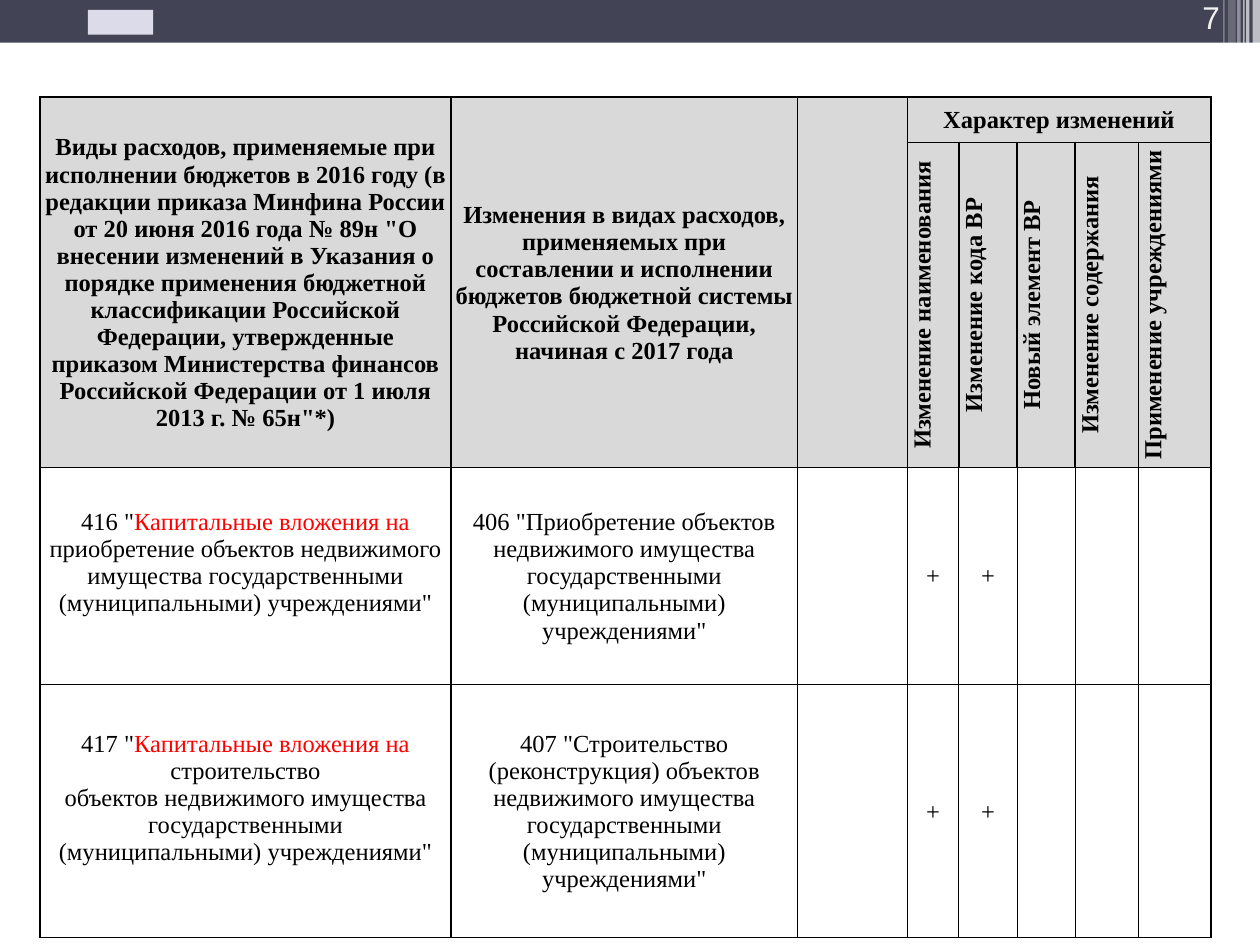
from copy import deepcopy

from lxml import etree
from pptx import Presentation
from pptx.dml.color import RGBColor
from pptx.enum.shapes import MSO_SHAPE as Preset
from pptx.enum.text import MSO_ANCHOR as Anchor, PP_ALIGN as Align
from pptx.oxml.ns import qn
from pptx.util import Cm, Pt

COLORS = {
    "band": "424456",
    "white": "FFFFFF",
    "emblem": "DBDBE9",
    "number": "F2F2F2",
    "header": "D9D9D9",
    "black": "000000",
    "red": "FF0000",
}
NUMBER_FORMAT = {"name": "Arial", "size": Pt(18)}
HEADER_FORMAT = {"name": "Times New Roman", "size": Pt(14), "bold": True}
BODY_FORMAT = {**HEADER_FORMAT, "bold": False}
CELL_FORMAT = {
    "margin_left": Cm(0.03),
    "margin_right": Cm(0.03),
    "margin_top": Cm(0.03),
    "margin_bottom": Cm(0),
    "vertical_anchor": Anchor.MIDDLE,
}


def add_run(paragraph, text, font_format, color):
    run = paragraph.add_run()
    run.text = text
    for name, value in font_format.items():
        setattr(run.font, name, value)
    run.font.color.rgb = RGBColor.from_string(COLORS[color])
    return run


def add_block(shapes, left, top, width, height, color):
    block = shapes.add_shape(Preset.RECTANGLE, Cm(left), Cm(top), Cm(width), Cm(height))
    block.shadow.inherit = False
    block.line.fill.background()
    block.fill.solid()
    block.fill.fore_color.rgb = RGBColor.from_string(COLORS[color])
    return block


presentation = Presentation()
presentation.slide_width = Cm(25.4)
presentation.slide_height = Cm(19.05)
slide = presentation.slides.add_slide(presentation.slide_layouts[6])

add_block(slide.shapes, 0, 0, 25.4, 0.86, "band")
stripes = [
    (25.25, 0.15, 1.73, 65),
    (25.12, 0.07, 1.73, 65),
    (25.06, 0.03, 1.73, 60),
    (24.94, 0.07, 1.73, 40),
    (24.76, 0.15, 1.63, 20),
    (24.66, 0.03, 1.63, 30),
]
for left, width, height, opacity in stripes:
    stripe = add_block(slide.shapes, left, 0, width, height, "white")
    fill_color = stripe.fill._xPr.find(qn("a:solidFill"))[0]
    etree.SubElement(fill_color, qn("a:alpha"), val=str(opacity * 1000))

add_block(slide.shapes, 1.77, 0.2, 1.32, 0.5, "emblem")

number_box = slide.shapes.add_textbox(Cm(22.83), Cm(0), Cm(2.01), Cm(0.84))
number_box.text_frame.word_wrap = True
number_box.text_frame.vertical_anchor = Anchor.BOTTOM
number = number_box.text_frame.paragraphs[0]
number.alignment = Align.RIGHT
add_run(number, "7", NUMBER_FORMAT, "number")

column_widths = [8.28, 6.99, 2.21, 1.04, 1.17, 1.17, 1.27, 1.47]
row_heights = [0.91, 6.17, 4.37, 5.11]
table = slide.shapes.add_table(
    len(row_heights), len(column_widths), Cm(0.81), Cm(1.96),
    Cm(sum(column_widths)), Cm(sum(row_heights)),
).table
table.first_row = False
table.horz_banding = False
for column, width in zip(table.columns, column_widths):
    column.width = Cm(width)
for row, height in zip(table.rows, row_heights):
    row.height = Cm(height)

for row_index in range(len(row_heights)):
    for column_index in range(len(column_widths)):
        cell = table.cell(row_index, column_index)
        is_header = row_index < 2
        for name, value in CELL_FORMAT.items():
            setattr(cell, name, value)
        properties = cell._tc.get_or_add_tcPr()
        edges = [
            ("lnL", column_index, True),
            ("lnR", column_index + 1, True),
            ("lnT", row_index, False),
            ("lnB", row_index + 1, False),
        ]
        for tag, position, is_vertical in edges:
            if is_vertical:
                is_thick = position != 7 if is_header else position in (0, 1, 8)
            else:
                is_thick = position <= 2
            width = Pt(1 if is_thick else 0.5)
            border = etree.SubElement(properties, qn(f"a:{tag}"), w=str(width))
            if not is_vertical and position == 1 and column_index == 2:
                etree.SubElement(border, qn("a:noFill"))
            else:
                border_fill = etree.SubElement(border, qn("a:solidFill"))
                etree.SubElement(border_fill, qn("a:srgbClr"), val=COLORS["black"])
        if is_header:
            cell.fill.solid()
            cell.fill.fore_color.rgb = RGBColor.from_string(COLORS["header"])
        else:
            cell.fill.background()

for first, last in [((0, 0), (1, 0)), ((0, 1), (1, 1)), ((0, 3), (0, 7))]:
    table.cell(*first).merge(table.cell(*last))

investments = ("Капитальные вложения на", "red")
institutions = "государственными\n(муниципальными) учреждениями\""
texts = {
    (0, 0): [(
        "Виды расходов, применяемые при исполнении бюджетов в 2016 году "
        "(в редакции приказа Минфина России от 20 июня 2016 года № 89н "
        "\"О внесении изменений в Указания о порядке применения бюджетной "
        "классификации Российской Федерации, утвержденные приказом "
        "Министерства финансов Российской Федерации от 1 июля 2013 г. № 65н\"*)",
        "black",
    )],
    (0, 1): [(
        "Изменения в видах расходов, применяемых при составлении и исполнении "
        "бюджетов бюджетной системы Российской Федерации, начиная с 2017 года",
        "black",
    )],
    (0, 3): [("Характер изменений", "black")],
    (2, 0): [
        ("416 \"", "black"), investments,
        (f" приобретение объектов недвижимого имущества {institutions}", "black"),
    ],
    (2, 1): [(f"406 \"Приобретение объектов недвижимого имущества {institutions}", "black")],
    (3, 0): [
        ("417 \"", "black"), investments,
        (f" строительство\nобъектов недвижимого имущества {institutions}", "black"),
    ],
    (3, 1): [(
        f"407 \"Строительство (реконструкция) объектов недвижимого имущества {institutions}",
        "black",
    )],
}
changes = [
    "Изменение наименования",
    "Изменение кода ВР",
    "Новый элемент ВР",
    "Изменение содержания",
    "Применение учреждениями",
]
for column_index, change in enumerate(changes, start=3):
    texts[1, column_index] = [(change, "black")]
    table.cell(1, column_index)._tc.tcPr.set("vert", "vert270")
for row_index in (2, 3):
    table.cell(row_index, 0).margin_bottom = Cm(0.55)
    for column_index in (3, 4):
        texts[row_index, column_index] = [("+", "black")]

for (row_index, column_index), parts in texts.items():
    paragraph = table.cell(row_index, column_index).text_frame.paragraphs[0]
    paragraph.alignment = Align.CENTER
    font_format = HEADER_FORMAT if row_index < 2 else BODY_FORMAT
    for text, color in parts:
        for line_index, line in enumerate(text.split("\n")):
            if line_index:
                paragraph.add_line_break()
            run = add_run(paragraph, line, font_format, color)
    for line_break in paragraph._p.findall(qn("a:br")):
        line_break.append(deepcopy(run._r.rPr))

presentation.save("out.pptx")
